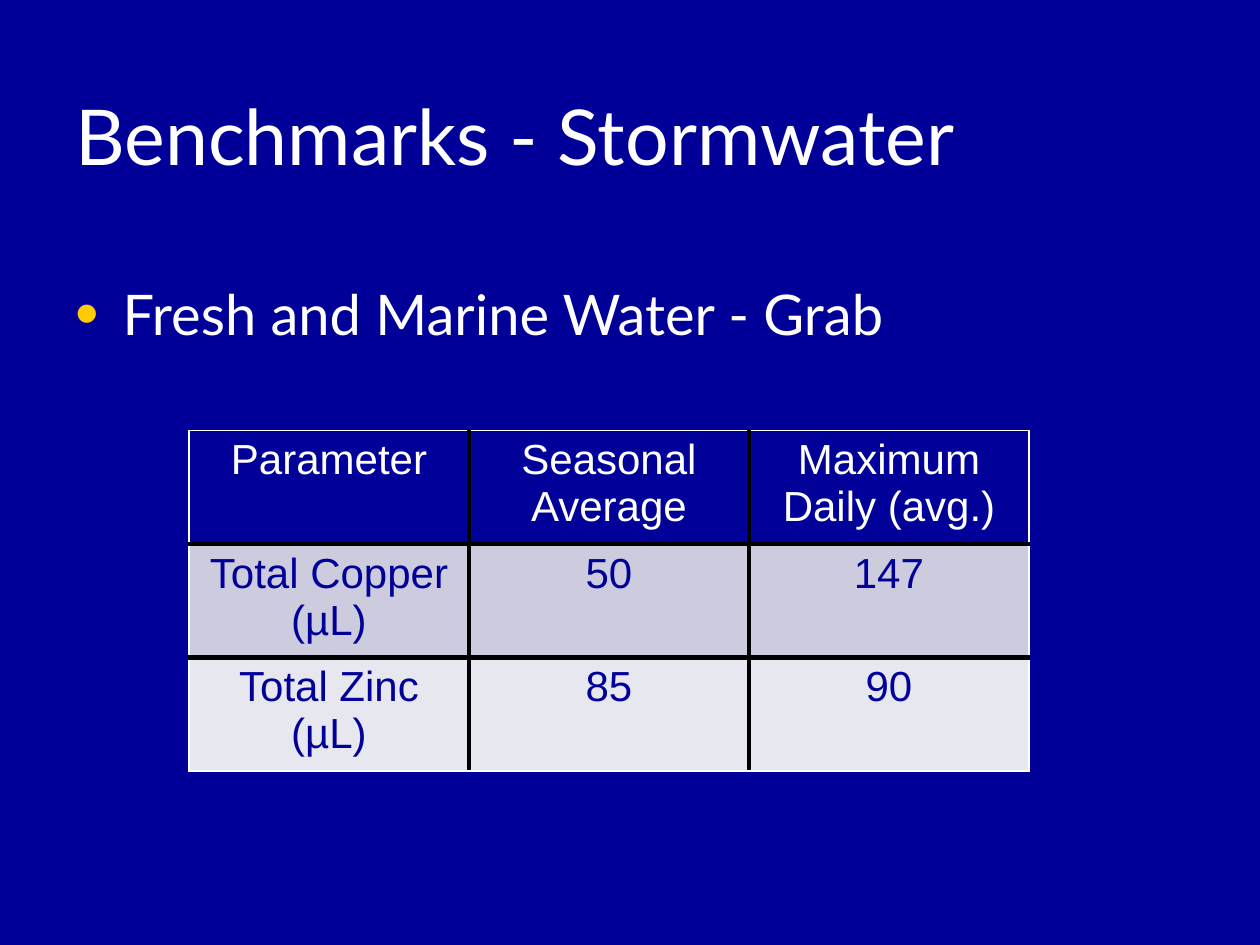
from dataclasses import dataclass
from typing import Any

from lxml.etree import SubElement
from pptx import Presentation
from pptx.dml.color import RGBColor
from pptx.enum.text import MSO_ANCHOR, PP_ALIGN
from pptx.oxml.ns import qn
from pptx.util import Pt


@dataclass(frozen=True)
class Theme:
    background: str = "000099"
    light: str = "FFFFFF"
    bullet: str = "FFCC00"
    rule: str = "000000"
    table_blue: str = "010199"
    row_fills: tuple[str, ...] = ("010199", "CCCCDE", "E7E7EF")
    heading_font: str = "Lato"
    table_font: str = "Arial"
    title_size: int = 44
    body_size: int = 32
    table_size: int = 24
    outer_width: int = 1
    inner_width: int = 3


@dataclass(frozen=True)
class Box:
    left: float
    top: float
    width: float
    height: float

    def lengths(self) -> tuple[Pt, ...]:
        return tuple(Pt(v) for v in (self.left, self.top, self.width, self.height))


@dataclass(frozen=True)
class TextItem:
    text: str
    box: Box
    size: int
    anchor: MSO_ANCHOR
    bulleted: bool = False


THEME = Theme()
TEXT_ITEMS = (
    TextItem("Benchmarks - Stormwater", Box(36, 23, 648, 108.5),
             THEME.title_size, MSO_ANCHOR.MIDDLE),
    TextItem("Fresh and Marine Water - Grab", Box(36, 156, 648, 324),
             THEME.body_size, MSO_ANCHOR.TOP, bulleted=True),
)
TABLE_BOX = Box(108, 246, 480, 182.4)
TABLE_ROWS = (
    ("Parameter", "Seasonal Average", "Maximum Daily (avg.)"),
    ("Total Copper (µL)", "50", "147"),
    ("Total Zinc (µL)", "85", "90"),
)


def apply_format(target: Any, values: dict[str, Any]) -> None:
    for name, value in values.items():
        setattr(target, name, value)


def format_font(paragraph: Any, name: str, size: int, color: str) -> None:
    apply_format(paragraph.font, {"name": name, "size": Pt(size)})
    paragraph.font.color.rgb = RGBColor.from_string(color)


def add_bullet(paragraph: Any) -> None:
    properties = paragraph._p.get_or_add_pPr()
    indent = Pt(27)
    properties.set("marL", str(indent))
    properties.set("indent", str(-indent))
    color = SubElement(properties, qn("a:buClr"))
    SubElement(color, qn("a:srgbClr"), val=THEME.bullet)
    SubElement(properties, qn("a:buSzPct"), val="120000")
    SubElement(properties, qn("a:buFont"), typeface=THEME.table_font)
    SubElement(properties, qn("a:buChar"), char="•")


def add_text(slide: Any, item: TextItem) -> None:
    frame = slide.shapes.add_textbox(*item.box.lengths()).text_frame
    apply_format(frame, {"word_wrap": True, "vertical_anchor": item.anchor})
    paragraph = frame.paragraphs[0]
    paragraph.text = item.text
    if item.bulleted:
        add_bullet(paragraph)
    format_font(paragraph, THEME.heading_font, item.size, THEME.light)


def add_borders(cell: Any, outer_sides: dict[str, bool]) -> None:
    """Draw thin light lines on outer sides and thick dark ones inside."""
    properties = cell._tc.get_or_add_tcPr()
    for position, (side, is_outer) in enumerate(outer_sides.items()):
        width = THEME.outer_width if is_outer else THEME.inner_width
        line = SubElement(properties, qn(f"a:ln{side}"), w=str(Pt(width)))
        fill = SubElement(line, qn("a:solidFill"))
        SubElement(fill, qn("a:srgbClr"), val=THEME.light if is_outer else THEME.rule)
        properties.insert(position, line)


def add_benchmark_table(slide: Any, rows: tuple[tuple[str, ...], ...], box: Box) -> None:
    last_row, last_column = len(rows) - 1, len(rows[0]) - 1
    table = slide.shapes.add_table(len(rows), len(rows[0]), *box.lengths()).table
    for row, texts in enumerate(rows):
        for column, text in enumerate(texts):
            cell = table.cell(row, column)
            cell.fill.solid()
            cell.fill.fore_color.rgb = RGBColor.from_string(THEME.row_fills[row])
            paragraph = cell.text_frame.paragraphs[0]
            apply_format(paragraph, {"text": text, "alignment": PP_ALIGN.CENTER})
            format_font(paragraph, THEME.table_font, THEME.table_size,
                        THEME.table_blue if row else THEME.light)
            paragraph.font.bold = False
            add_borders(cell, {"L": column == 0, "R": column == last_column,
                               "T": row == 0, "B": row == last_row})


def main() -> None:
    presentation = Presentation()
    apply_format(presentation, {"slide_width": Pt(720), "slide_height": Pt(540)})
    slide = presentation.slides.add_slide(presentation.slide_layouts[6])

    # Background
    slide.background.fill.solid()
    slide.background.fill.fore_color.rgb = RGBColor.from_string(THEME.background)

    # Title and bullet
    for item in TEXT_ITEMS:
        add_text(slide, item)

    # Benchmark values
    add_benchmark_table(slide, TABLE_ROWS, TABLE_BOX)

    presentation.save("out.pptx")


if __name__ == "__main__":
    main()
